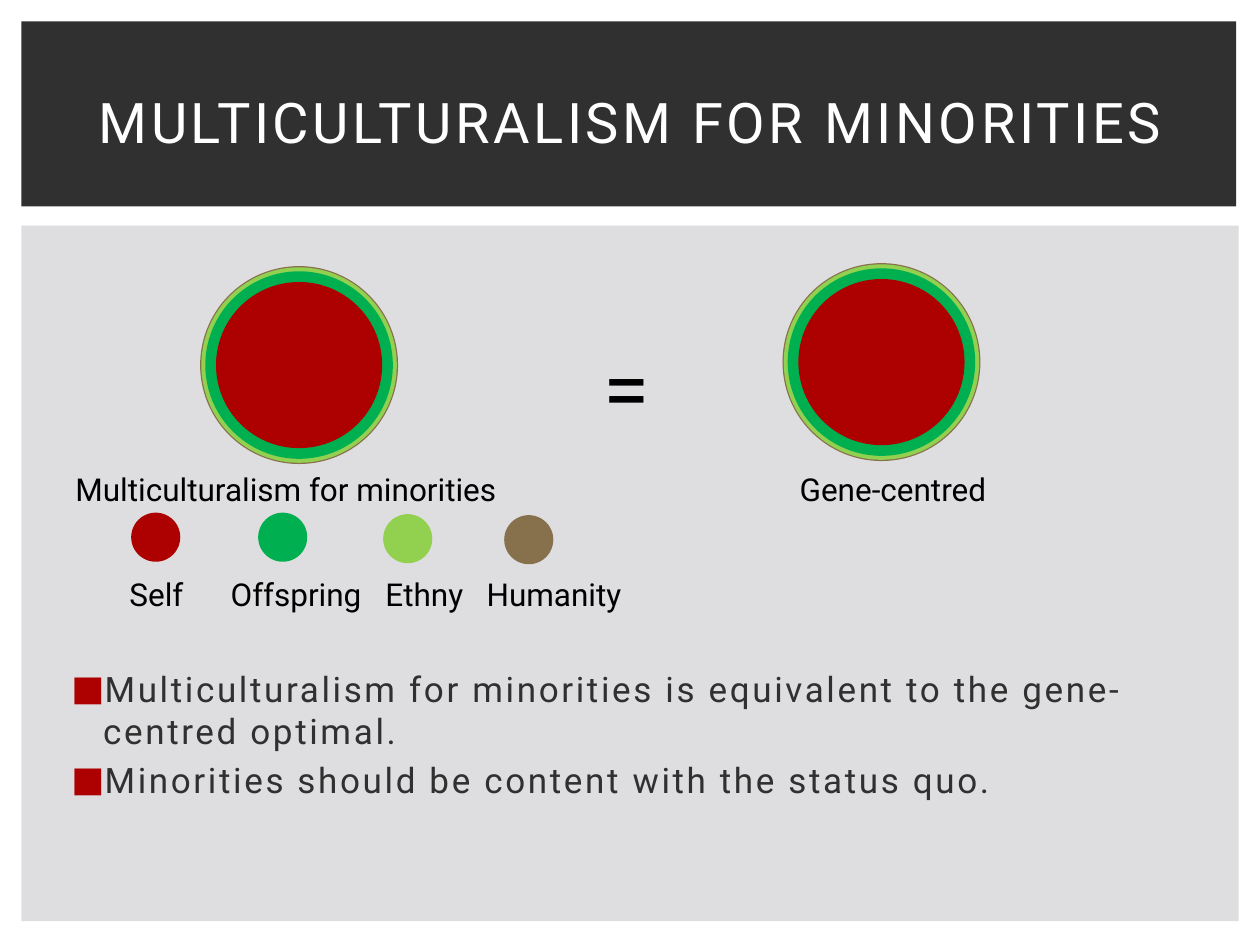
"""Build a slide comparing multiculturalism for minorities with the gene-centred optimum."""
from dataclasses import dataclass

from lxml import etree
from pptx import Presentation
from pptx.dml.color import RGBColor
from pptx.enum.shapes import MSO_SHAPE
from pptx.enum.text import MSO_ANCHOR, MSO_AUTO_SIZE, PP_ALIGN
from pptx.oxml.ns import qn
from pptx.util import Cm, Pt

RECTANGLE = MSO_SHAPE.RECTANGLE
OVAL = MSO_SHAPE.OVAL
MIDDLE = MSO_ANCHOR.MIDDLE
TOP = MSO_ANCHOR.TOP
LEFT = PP_ALIGN.LEFT
CENTER = PP_ALIGN.CENTER
FIXED = MSO_AUTO_SIZE.NONE
TITLE_ONLY = 5


@dataclass(frozen=True)
class Theme:
    font: str = "Roboto"
    dark: str = "303030"
    panel: str = "DEDEE0"
    white: str = "FFFFFF"
    black: str = "000000"
    self_red: str = "AD0101"
    offspring: str = "00B050"
    ethny: str = "92D050"
    humanity: str = "87714D"
    title_size: int = 32
    body_size: int = 20
    label_size: int = 18
    sign_size: int = 48
    title_spacing: float = 2
    body_spacing: float = 1.5


class SlideBuilder:
    def __init__(self, slide, theme):
        self.slide = slide
        self.theme = theme

    def shape(self, kind, left, top, width, height, color):
        shape = self.slide.shapes.add_shape(kind, Cm(left), Cm(top), Cm(width), Cm(height))
        shape.shadow.inherit = False
        shape.fill.solid()
        shape.fill.fore_color.rgb = RGBColor.from_string(color)
        shape.line.fill.background()

    def circle(self, center_x, center_y, diameter, color):
        radius = diameter / 2
        self.shape(OVAL, center_x - radius, center_y - radius, diameter, diameter, color)

    def rings(self, center_x, center_y, layers):
        for diameter, color in layers:
            self.circle(center_x, center_y, diameter, color)

    def run(self, paragraph, text, size, color, spacing=0):
        run = paragraph.add_run()
        run.text = text
        run.font.name = self.theme.font
        run.font.size = Pt(size)
        run.font.color.rgb = RGBColor.from_string(color)
        if spacing:
            run.font._element.set("spc", str(int(spacing * 100)))

    def title(self, text, left, top, width, height):
        title = self.slide.shapes.title
        title.left, title.top, title.width, title.height = map(Cm, (left, top, width, height))
        title.element.getparent().append(title.element)
        frame = title.text_frame
        frame.auto_size = FIXED
        frame.vertical_anchor = MIDDLE
        paragraph = frame.paragraphs[0]
        paragraph.alignment = CENTER
        self.run(paragraph, text, self.theme.title_size, self.theme.white, self.theme.title_spacing)

    def text_frame(self, left, top, width, height):
        box = self.slide.shapes.add_textbox(Cm(left), Cm(top), Cm(width), Cm(height))
        frame = box.text_frame
        frame.word_wrap = True
        frame.vertical_anchor = TOP
        return frame

    def label(self, text, left, top, width, height, size, tab_stops=()):
        paragraph = self.text_frame(left, top, width, height).paragraphs[0]
        paragraph.alignment = LEFT
        if tab_stops:
            properties = paragraph._p.get_or_add_pPr()
            tab_list = etree.SubElement(properties, qn("a:tabLst"))
            for position in tab_stops:
                etree.SubElement(tab_list, qn("a:tab"), pos=str(Cm(position)), algn="l")
        self.run(paragraph, text, size, self.theme.black)

    def bullets(self, items, left, top, width, height):
        frame = self.text_frame(left, top, width, height)
        for index, text in enumerate(items):
            paragraph = frame.add_paragraph() if index else frame.paragraphs[0]
            paragraph.space_before = Pt(4)
            properties = paragraph._p.get_or_add_pPr()
            properties.set("marL", str(Cm(0.76)))
            properties.set("indent", str(Cm(-0.64)))
            bullet_color = etree.SubElement(properties, qn("a:buClr"))
            etree.SubElement(bullet_color, qn("a:srgbClr"), val=self.theme.self_red)
            etree.SubElement(properties, qn("a:buFont"), typeface=self.theme.font)
            etree.SubElement(properties, qn("a:buChar"), char="■")
            self.run(paragraph, text, self.theme.body_size, self.theme.dark, self.theme.body_spacing)


def main():
    theme = Theme()
    presentation = Presentation()
    presentation.slide_width = Cm(25.4)
    presentation.slide_height = Cm(19.05)
    slide = presentation.slides.add_slide(presentation.slide_layouts[TITLE_ONLY])
    builder = SlideBuilder(slide, theme)

    builder.shape(RECTANGLE, 0.43, 4.55, 24.54, 14.02, theme.panel)
    builder.shape(RECTANGLE, 0.43, 0.43, 24.49, 3.73, theme.dark)
    builder.title("MULTICULTURALISM FOR MINORITIES", 1.07, 0.99, 23.29, 2.92)

    layers = [
        (3.99, theme.humanity),
        (3.94, theme.ethny),
        (3.78, theme.offspring),
        (3.35, theme.self_red),
    ]
    builder.rings(6.03, 7.36, layers)
    builder.rings(17.77, 7.3, layers)
    builder.label("=", 11.91, 6.63, 1.52, 2.31, theme.sign_size)
    builder.label("Multiculturalism for minorities\tGene-centred",
                  1.27, 9.35, 22.83, 1.02, theme.label_size, [14.6])

    legend = [
        (3.14, 10.83, theme.self_red),
        (5.7, 10.83, theme.offspring),
        (8.22, 10.86, theme.ethny),
        (10.66, 10.88, theme.humanity),
    ]
    for center_x, center_y, color in legend:
        builder.circle(center_x, center_y, 0.99, color)
    builder.label("\tSelf\tOffspring\tEthny\tHumanity",
                  2.06, 11.46, 11.18, 1.02, theme.label_size, [0.3, 2.34, 5.46, 7.5])

    builder.bullets([
        "Multiculturalism for minorities is equivalent to the gene-centred optimal.",
        "Minorities should be content with the status quo.",
    ], 1.07, 13.34, 23.34, 4.39)

    presentation.save("out.pptx")


if __name__ == "__main__":
    main()
